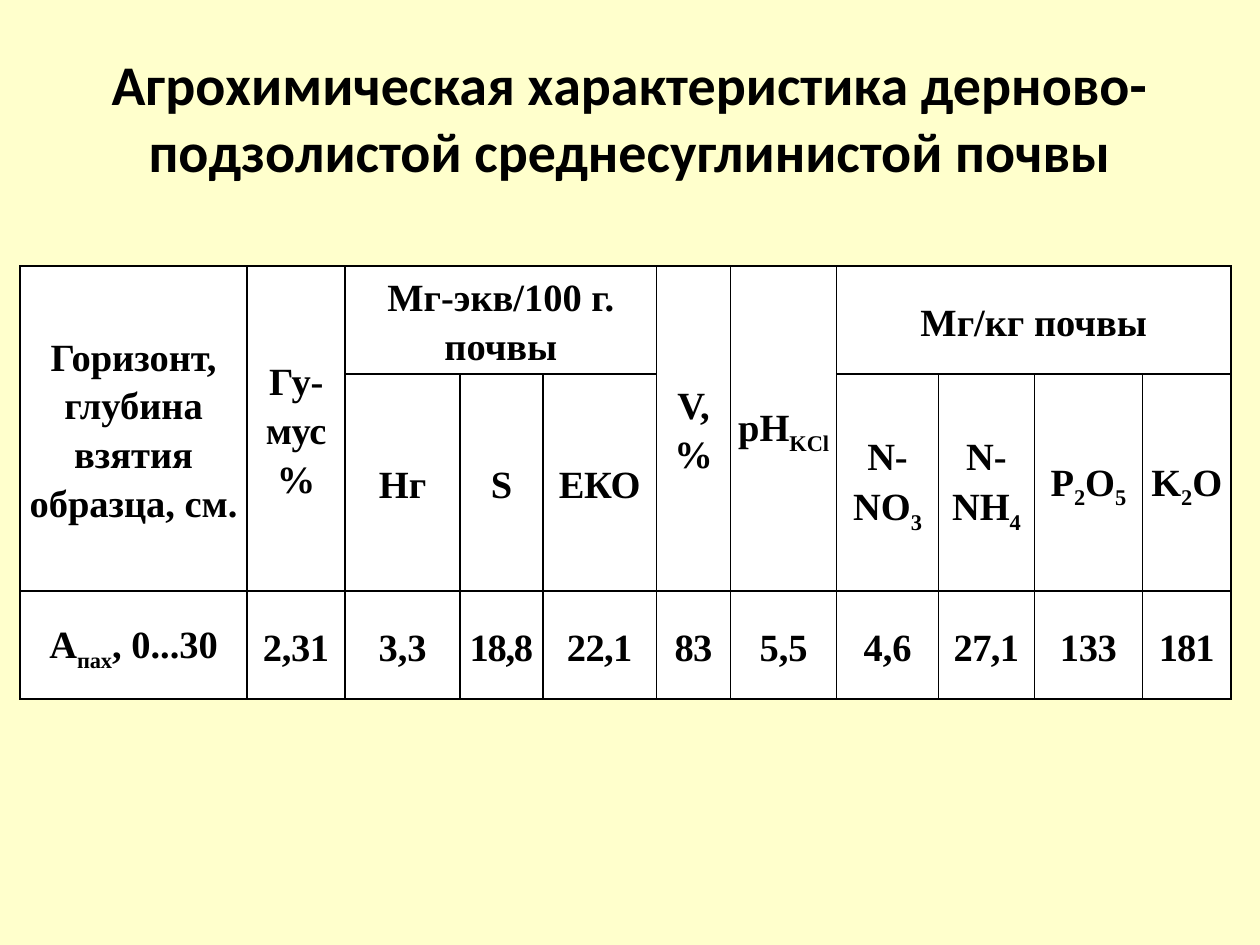
from lxml.etree import SubElement
from pptx import Presentation
from pptx.dml.color import RGBColor
from pptx.enum.text import MSO_ANCHOR, PP_ALIGN
from pptx.oxml.ns import qn
from pptx.util import Inches, Pt

CREAM = RGBColor(0xFF, 0xFF, 0xCC)
WHITE = RGBColor(0xFF, 0xFF, 0xFF)
BLACK = RGBColor(0, 0, 0)

COLUMNS = [1.8, 0.78, 0.91, 0.66, 0.9, 0.59, 0.84, 0.81, 0.76, 0.86, 0.7]
ROWS = [0.86, 1.72, 0.86]
MERGES = [(0, 0, 1, 0), (0, 1, 1, 1), (0, 2, 0, 4),
          (0, 5, 1, 5), (0, 6, 1, 6), (0, 7, 0, 10)]
CONTENT = [
    ["Горизонт, глубина взятия образца, см.", "Гу-мус\n%", "Мг-экв/100 г. почвы", "", "",
     "V,%", "рН_KCl_", "Мг/кг почвы", "", "", ""],
    ["", "", "Нг", "S", "ЕКО", "", "", "N-NО_3_", "N-NH_4_", "P_2_O_5_", "K_2_O"],
    ["А_пах_, 0...30", "2,31", "3,3", "18,8", "22,1", "83", "5,5", "4,6", "27,1", "133", "181"],
]
TRACKING = {"Гу-мус": -20, "ЕКО": -20, "2,31": -20, "18,8": -70, "22,1": -30,
            "83": -30, "27,1": -30, "133": -20, "181": -50}


def style_run(run, font_name, size):
    run.font.name = font_name
    run.font.size = Pt(size)
    run.font.bold = True
    run.font.color.rgb = BLACK


def draw_borders(cell):
    properties = cell._tc.get_or_add_tcPr()
    for side in ("a:lnL", "a:lnR", "a:lnT", "a:lnB"):
        border = SubElement(properties, qn(side), w=str(Pt(1)))
        color = SubElement(SubElement(border, qn("a:solidFill")), qn("a:srgbClr"))
        color.set("val", str(BLACK))


deck = Presentation()
deck.slide_width, deck.slide_height = Inches(10), Inches(7.5)
slide = deck.slides.add_slide(deck.slide_layouts[5])
slide.background.fill.solid()
slide.background.fill.fore_color.rgb = CREAM

heading = slide.shapes.title
heading.left, heading.top = Inches(0.5), Inches(0.3)
heading.width, heading.height = Inches(9), Inches(1.25)
heading.text_frame.vertical_anchor = MSO_ANCHOR.MIDDLE
heading_line = heading.text_frame.paragraphs[0]
heading_line.alignment = PP_ALIGN.CENTER
heading_run = heading_line.add_run()
heading_run.text = "Агрохимическая характеристика дерново-подзолистой среднесуглинистой почвы"
style_run(heading_run, "Calibri", 32)

soil = slide.shapes.add_table(len(ROWS), len(COLUMNS), Inches(0.16), Inches(2.11),
                              Inches(sum(COLUMNS)), Inches(sum(ROWS))).table
soil.first_row = soil.horz_banding = False
for column, width in zip(soil.columns, COLUMNS):
    column.width = Inches(width)
for row, height in zip(soil.rows, ROWS):
    row.height = Inches(height)
for top, left, bottom, right in MERGES:
    soil.cell(top, left).merge(soil.cell(bottom, right))

for row, labels in enumerate(CONTENT):
    for column, label in enumerate(labels):
        cell = soil.cell(row, column)
        draw_borders(cell)
        cell.fill.solid()
        cell.fill.fore_color.rgb = WHITE
        cell.vertical_anchor = MSO_ANCHOR.MIDDLE
        cell.margin_left = cell.margin_right = Inches(0.03)
        cell.margin_top = cell.margin_bottom = 0
        if not label:
            continue
        for index, line in enumerate(label.split("\n")):
            paragraph = cell.text_frame.add_paragraph() if index else cell.text_frame.paragraphs[0]
            paragraph.alignment = PP_ALIGN.CENTER
            paragraph.line_spacing = 1.15
            for position, part in enumerate(line.split("_")):
                if not part:
                    continue
                run = paragraph.add_run()
                run.text = part
                style_run(run, "Times New Roman", 22)
                if position % 2:
                    run.font._element.set("baseline", "-25000")
                if line in TRACKING:
                    run.font._element.set("spc", str(TRACKING[line]))

deck.save("out.pptx")
